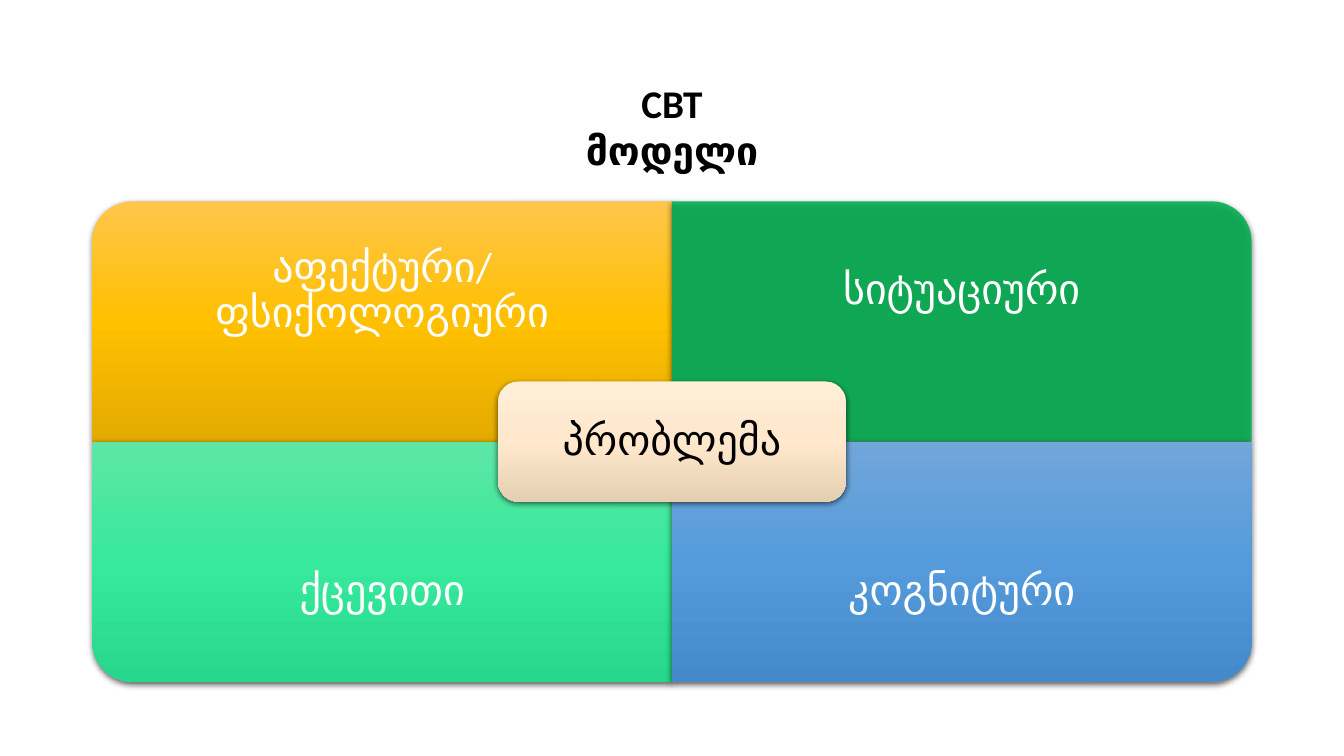
from dataclasses import dataclass

from lxml import etree
from pptx import Presentation
from pptx.dml.color import RGBColor
from pptx.enum.shapes import MSO_SHAPE
from pptx.enum.text import MSO_ANCHOR, PP_ALIGN
from pptx.oxml import parse_xml
from pptx.oxml.ns import nsdecls, qn
from pptx.util import Pt

CORNER = MSO_SHAPE.ROUND_1_RECTANGLE
ROUND = MSO_SHAPE.ROUNDED_RECTANGLE
CENTER = PP_ALIGN.CENTER
MIDDLE = MSO_ANCHOR.MIDDLE
TOP = MSO_ANCHOR.TOP


@dataclass(frozen=True)
class Theme:
    font: str = "Calibri"
    head: float = 28
    body: float = 30
    dark: str = "000000"
    light: str = "FFFFFF"
    gold: tuple = ("FFC64B", "FFC000", "E3AB00")
    green: tuple = ("00B050",)
    mint: tuple = ("5EE6A6", "37E99C", "27D88C")
    blue: tuple = ("71A6DB", "559BDB", "448ACA")
    cream: tuple = ("FFEED8", "FFE8CC", "E5CFB3")
    alpha: int = 86


def assign(item, values):
    for name, value in values.items():
        setattr(item, name, value)


class Canvas:
    def __init__(self, slide, theme):
        self.slide = slide
        self.theme = theme

    def panel(self, kind, box, tones, turn=0):
        """Draw a shadowed panel that covers box after a turn in quarter steps."""
        x, y, w, h = box
        if turn % 180:
            x, y, w, h = x + (w - h) / 2, y + (h - w) / 2, h, w
        shape = self.slide.shapes.add_shape(kind, Pt(x), Pt(y), Pt(w), Pt(h))
        shape.rotation = turn
        shape.line.fill.background()
        self.paint(shape, tones)
        self.shade(shape)

    def paint(self, shape, tones):
        """Fill with one translucent tone, or with a gradient that stays upright."""
        if len(tones) == 1:
            shape.fill.solid()
            shape.fill.fore_color.rgb = RGBColor.from_string(tones[0])
            tone = shape.fill._xPr.find(qn("a:solidFill"))[0]
            etree.SubElement(tone, qn("a:alpha"), val=str(self.theme.alpha * 1000))
            return
        step = 100000 // (len(tones) - 1)
        stops = "".join(
            f'<a:gs pos="{i * step}"><a:srgbClr val="{tone}"/></a:gs>'
            for i, tone in enumerate(tones))
        shape.fill.background()
        props = shape._element.spPr
        props.replace(props.find(qn("a:noFill")), parse_xml(
            f'<a:gradFill {nsdecls("a")} rotWithShape="0"><a:gsLst>{stops}</a:gsLst>'
            '<a:lin ang="5400000" scaled="0"/></a:gradFill>'))

    def shade(self, shape):
        shape.shadow.inherit = False
        shape._element.spPr.find(qn("a:effectLst")).append(parse_xml(
            f'<a:outerShdw {nsdecls("a")} blurRad="{Pt(4.5)}" dist="{Pt(1.5)}" '
            'dir="5400000" algn="ctr" rotWithShape="0"><a:srgbClr val="000000">'
            '<a:alpha val="63000"/></a:srgbClr></a:outerShdw>'))

    def text(self, words, box, size, color, pads, anchor, bold=False, flow=None):
        frame = self.slide.shapes.add_textbox(*map(Pt, box)).text_frame
        sides = ("left", "top", "right", "bottom")
        assign(frame, {f"margin_{side}": Pt(pad) for side, pad in zip(sides, pads)})
        assign(frame, {"word_wrap": True, "vertical_anchor": anchor})
        para = frame.paragraphs[0]
        assign(para, {"alignment": CENTER, **(flow or {})})
        run = para.add_run()
        run.text = words
        assign(run.font, {"name": self.theme.font, "size": Pt(size), "bold": bold})
        run.font.color.rgb = RGBColor.from_string(color)

    def label(self, words, box, color, pad):
        flow = {"line_spacing": 0.9, "space_after": Pt(10.5)}
        self.text(words, box, self.theme.body, color, (pad,) * 4, MIDDLE, flow=flow)


def main():
    deck = Presentation()
    assign(deck, {"slide_width": Pt(960), "slide_height": Pt(540)})
    theme = Theme()
    canvas = Canvas(deck.slides.add_slide(deck.slide_layouts[6]), theme)

    left, top, wide, high = 66, 143.8, 414, 171.6
    parts = (
        ("აფექტური/ფსიქოლოგიური", theme.gold, 270),
        ("სიტუაციური", theme.green, 0),
        ("ქცევითი", theme.mint, 180),
        ("კოგნიტური", theme.blue, 90),
    )
    for i, (words, tones, turn) in enumerate(parts):
        row, col = divmod(i, 2)
        x, y = left + col * wide, top + row * high
        canvas.panel(CORNER, (x, y, wide, high), tones, turn)
        area = (x, y + row * high / 4, wide, high * 3 / 4)
        canvas.label(words, area, theme.light, 16.8)

    w, h = wide * 0.6, high / 2
    x, y = left + wide - w / 2, top + high - h / 2
    canvas.panel(ROUND, (x, y, w, h), theme.cream)
    gap = 4.2
    canvas.label("პრობლემა", (x + gap, y + gap, w - 2 * gap, h - 2 * gap),
                 theme.dark, 8.4)

    canvas.text("CBT მოდელი", (386.8, 53.3, 186.4, 41.2), theme.head, theme.dark,
                (7.2, 3.6, 7.2, 3.6), TOP, bold=True)
    deck.save("out.pptx")


if __name__ == "__main__":
    main()
